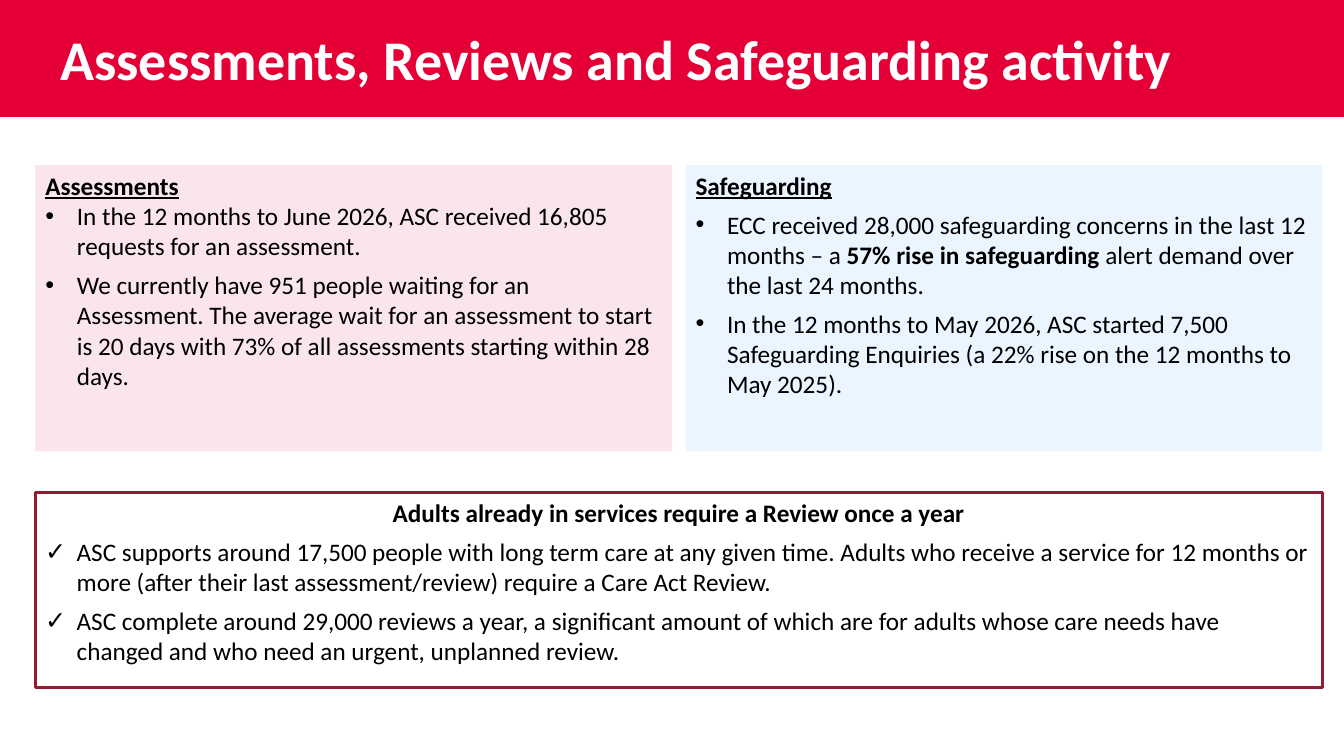
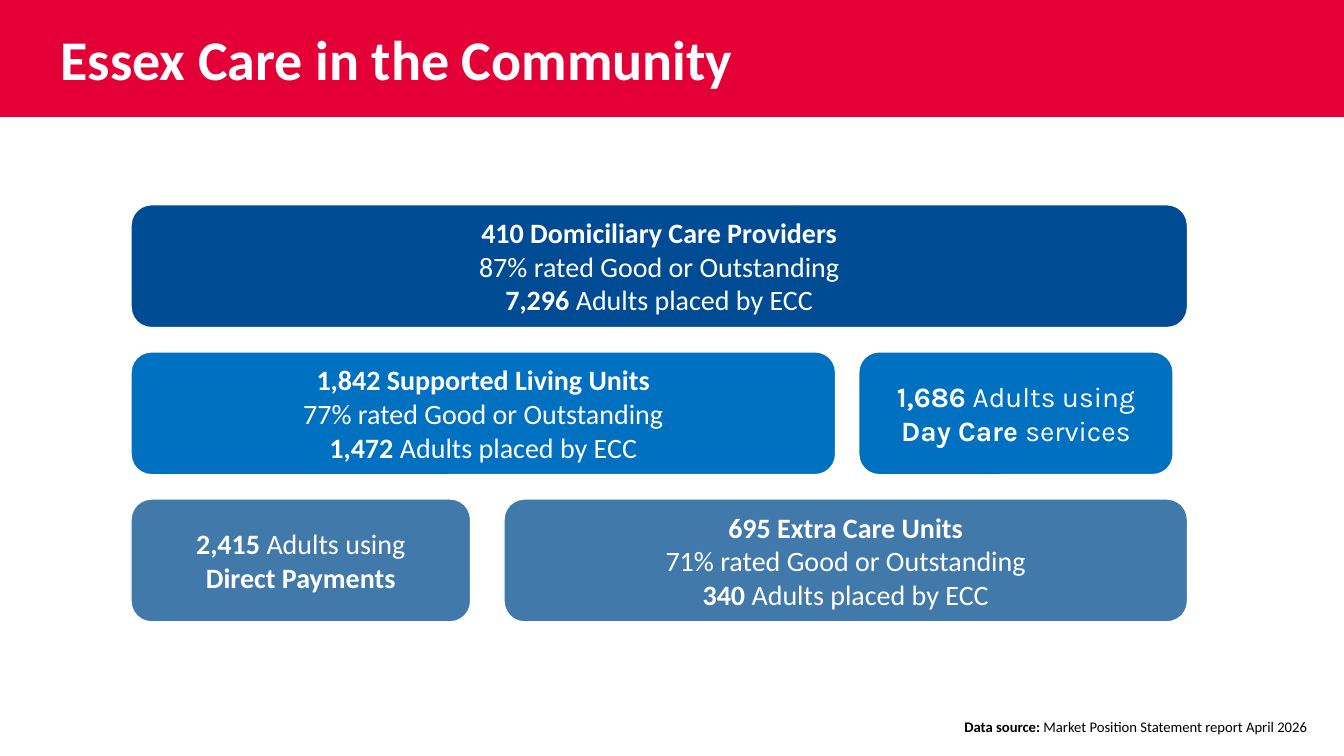
from lxml import etree
from pptx import Presentation
from pptx.dml.color import RGBColor
from pptx.enum.shapes import MSO_SHAPE
from pptx.enum.text import MSO_ANCHOR, MSO_AUTO_SIZE, PP_ALIGN
from pptx.oxml.ns import qn
from pptx.util import Pt

RECT, ROUNDED = MSO_SHAPE.RECTANGLE, MSO_SHAPE.ROUNDED_RECTANGLE
TOP, MIDDLE = MSO_ANCHOR.TOP, MSO_ANCHOR.MIDDLE
LEFT, CENTER = PP_ALIGN.LEFT, PP_ALIGN.CENTER
NO_FIT = MSO_AUTO_SIZE.NONE
TITLE_ONLY, TWO_CONTENT = 5, 3

COLORS = {
    "red": "E40037", "maroon": "921D33", "pink": "FAE6EA", "pale": "EBF5FF",
    "navy": "004C94", "blue": "0070C0", "steel": "4179AA",
    "white": "FFFFFF", "black": "000000",
}
FONT, ACCENT_FONT = "Calibri", "Karla"
SLIDE_W, SLIDE_H, BAND_H = 960, 540, 83.5

ACTIVITY_TITLE = "Assessments, Reviews and Safeguarding activity"
PANELS = [
    ("Assessments", "pink", 0, [
        [("In the 12 months to June 2026, ASC received 16,805 requests for an assessment.", False)],
        [("We currently have 951 people waiting for an Assessment. The average wait for an "
          "assessment to start is 20 days with 73% of all assessments starting within 28 days.", False)],
    ]),
    ("Safeguarding", "pale", 6, [
        [("ECC received 28,000 safeguarding concerns in the last 12 months – a ", False),
         ("57% rise in safeguarding", True),
         (" alert demand over the last 24 months.", False)],
        [("In the 12 months to May 2026, ASC started 7,500 Safeguarding Enquiries "
          "(a 22% rise on the 12 months to May 2025).", False)],
    ]),
]
REVIEW_HEADING = "Adults already in services require a Review once a year"
REVIEW_ITEMS = [
    [("ASC supports around 17,500 people with long term care at any given time. Adults who "
      "receive a service for 12 months or more (after their last assessment/review) "
      "require a Care Act Review.", False)],
    [("ASC complete around 29,000 reviews a year, a significant amount of which are for adults "
      "whose care needs have changed and who need an urgent, unplanned review.", False)],
]

CARE_TITLE = "Essex Care in the Community"
CARE_ROWS = [
    ("navy", [
        (93.6, 754.6, FONT, [
            [("410 Domiciliary Care Providers", True)],
            [("87% rated Good or Outstanding", False)],
            [("7,296", True), (" Adults placed by ECC", False)]]),
    ]),
    ("blue", [
        (93.6, 503.3, FONT, [
            [("1,842 Supported Living Units", True)],
            [("77% rated Good or Outstanding", False)],
            [("1,472", True), (" Adults placed by ECC", False)]]),
        (613.4, 224.6, ACCENT_FONT, [
            [("1,686", True), (" Adults using", False)],
            [("Day Care ", True), ("services", False)]]),
    ]),
    ("steel", [
        (93.6, 242.6, FONT, [
            [("2,415", True), (" Adults using", False)],
            [("Direct Payments", True)]]),
        (360, 488.2, FONT, [
            [("695 Extra Care Units", True)],
            [("71% rated Good or Outstanding", False)],
            [("340 ", True), ("Adults placed by ECC", False)]]),
    ]),
]
SOURCE = [("Data source: ", True), ("Market Position Statement report April 2026", False)]

PANEL_X, PANEL_Y, PANEL_W, PANEL_H, PANEL_GAP = 25.2, 118, 455, 204.5, 9.4
REVIEW_Y, REVIEW_H = 352, 139
CARD_Y, CARD_H, CARD_STEP = 146.2, 87.8, 105.1
INDENT = 22.5


def rgb(name):
    return RGBColor.from_string(COLORS[name])


def place(sp, x, y, w, h):
    sp.left, sp.top, sp.width, sp.height = Pt(x), Pt(y), Pt(w), Pt(h)


def paint(sp, fill, line=None, line_w=1):
    sp.fill.solid()
    sp.fill.fore_color.rgb = rgb(fill)
    if line:
        sp.line.color.rgb = rgb(line)
        sp.line.width = Pt(line_w)
    else:
        sp.line.fill.background()


def setup_text(sp, anchor):
    tf = sp.text_frame
    tf.word_wrap = True
    tf.auto_size = NO_FIT
    tf.vertical_anchor = anchor
    return tf


def add_shape(s, kind, box, fill, line, line_w):
    sp = s.shapes.add_shape(kind, *map(Pt, box))
    sp.shadow.inherit = False
    paint(sp, fill, line, line_w)
    return sp


def write(tf, i, runs, size, color="black", font=FONT, align=LEFT, after=0, bullet=None, underline=False):
    p = tf.paragraphs[0] if i == 0 else tf.add_paragraph()
    pPr = p._p.get_or_add_pPr()
    indent = Pt(INDENT) if bullet else 0
    pPr.set("marL", str(indent))
    pPr.set("indent", str(-indent))
    if bullet:
        etree.SubElement(pPr, qn("a:buFont")).set("typeface", "Arial")
        etree.SubElement(pPr, qn("a:buChar")).set("char", bullet)
    else:
        etree.SubElement(pPr, qn("a:buNone"))
    p.alignment = align
    p.space_before, p.space_after = Pt(0), Pt(after)
    for text, bold in runs:
        r = p.add_run()
        r.text = text
        r.font.name, r.font.size = font, Pt(size)
        r.font.bold, r.font.underline = bold, underline
        r.font.color.rgb = rgb(color)


def write_list(tf, items, bullet):
    for i, runs in enumerate(items, 1):
        write(tf, i, runs, 18, after=6, bullet=bullet)


def new_slide(prs, layout, title):
    s = prs.slides.add_slide(prs.slide_layouts[layout])
    sp = s.shapes.title
    place(sp, 0, 0, SLIDE_W, BAND_H)
    paint(sp, "red")
    tf = setup_text(sp, MIDDLE)
    tf.margin_left = Pt(43.2)
    write(tf, 0, [(title, True)], 40, "white")
    return s


def activity_slide(prs):
    s = new_slide(prs, TWO_CONTENT, ACTIVITY_TITLE)
    for i, (heading, fill, after, items) in enumerate(PANELS):
        sp = s.placeholders[i + 1]
        place(sp, PANEL_X + i * (PANEL_W + PANEL_GAP), PANEL_Y, PANEL_W, PANEL_H)
        paint(sp, fill)
        tf = setup_text(sp, TOP)
        write(tf, 0, [(heading, True)], 18, after=after, underline=True)
        write_list(tf, items, "•")
    box = (PANEL_X, REVIEW_Y, 2 * PANEL_W + PANEL_GAP, REVIEW_H)
    tf = setup_text(add_shape(s, RECT, box, "white", "maroon", 2.25), TOP)
    write(tf, 0, [(REVIEW_HEADING, True)], 18, align=CENTER, after=6)
    write_list(tf, REVIEW_ITEMS, "✓")


def care_slide(prs):
    s = new_slide(prs, TITLE_ONLY, CARE_TITLE)
    for row, (fill, cards) in enumerate(CARE_ROWS):
        for x, w, font, lines in cards:
            box = (x, CARD_Y + row * CARD_STEP, w, CARD_H)
            tf = setup_text(add_shape(s, ROUNDED, box, fill, "white", 1), MIDDLE)
            for i, runs in enumerate(lines):
                write(tf, i, runs, 20, "white", font, CENTER)
    sp = s.shapes.add_textbox(Pt(681.8), Pt(509), Pt(270), Pt(20))
    write(setup_text(sp, TOP), 0, SOURCE, 10.5)


def main():
    prs = Presentation()
    prs.slide_width, prs.slide_height = Pt(SLIDE_W), Pt(SLIDE_H)
    activity_slide(prs)
    care_slide(prs)
    prs.save("out.pptx")


if __name__ == "__main__":
    main()
